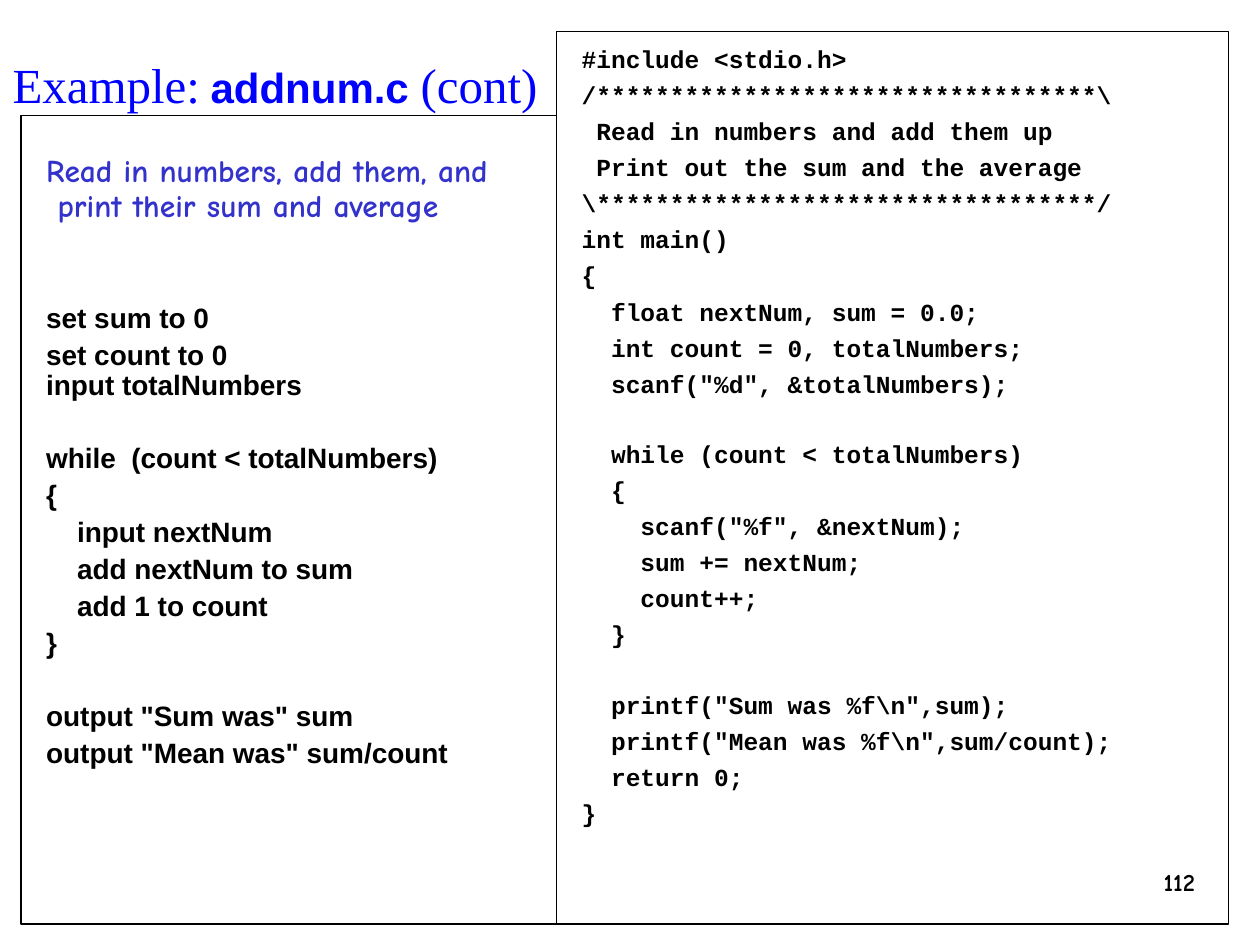
from pptx import Presentation
from pptx import util as u
from pptx.dml.color import RGBColor
from pptx.enum import shapes, text

BLACK = RGBColor(0x00, 0x00, 0x00)
BLUE = RGBColor(0x00, 0x00, 0xFF)
INDIGO = RGBColor(0x33, 0x33, 0xCC)

deck = Presentation()
deck.slide_width, deck.slide_height = u.Inches(10), u.Inches(7.5)
page = deck.slides.add_slide(deck.slide_layouts[5])
COLUMN = deck.slide_width / 120
ROW = deck.slide_height / 90


def grid(left, top, width, height):
    return (round(left * COLUMN), round(top * ROW),
            round(width * COLUMN), round(height * ROW))


def style(span, name, size, color, bold=True):
    span.font.name, span.font.size = name, u.Pt(size)
    span.font.bold, span.font.color.rgb = bold, color


title = page.shapes.title
title.left, title.top, title.width, title.height = grid(0, 4, 52.5, 6.84)
frame = title.text_frame
frame.auto_size = text.MSO_AUTO_SIZE.NONE
frame.word_wrap = False
frame.vertical_anchor = text.MSO_ANCHOR.TOP
frame.margin_top = u.Inches(0.1)
para = frame.paragraphs[0]
para.alignment = text.PP_ALIGN.LEFT
for words, name, size, bold in [
    ("Example:", "Times New Roman", 28, False),
    (" ", "Times New Roman", 24, False),
    ("addnum.c ", "Arial", 24, True),
    ("(cont)", "Times New Roman", 28, False),
]:
    span = para.add_run()
    span.text = words
    style(span, name, size, BLUE, bold)

pseudocode = r"""set sum to 0
set count to 0
input totalNumbers

while  (count < totalNumbers)
{
    input nextNum
    add nextNum to sum
    add 1 to count
}

output "Sum was" sum
output "Mean was" sum/count"""

program = r"""#include <stdio.h>
/**********************************\
 Read in numbers and add them up
 Print out the sum and the average
\**********************************/
int main()
{
  float nextNum, sum = 0.0;
  int count = 0, totalNumbers;
  scanf("%d", &totalNumbers);

  while (count < totalNumbers)
  {
    scanf("%f", &nextNum);
    sum += nextNum;
    count++;
  }

  printf("Sum was %f\n",sum);
  printf("Mean was %f\n",sum/count);
  return 0;
}"""

task = ["Read in numbers, add them, and", "print their sum and average"]

panels = [
    (grid(2, 11, 51, 77), 0.32, task, pseudocode, "Arial", 16, 0.9, 3.9, 20.5),
    (grid(53, 3, 64, 85), 0.1, [], program, "Courier New", 14, 1.0, 3.8, 19.65),
]
for place, inset, intro, code, name, size, spacing, gap, pitch in panels:
    box = page.shapes.add_shape(shapes.MSO_SHAPE.RECTANGLE, *place)
    box.shadow.inherit = False
    box.fill.background()
    box.line.color.rgb, box.line.width = BLACK, u.Pt(0.75)
    frame = box.text_frame
    frame.word_wrap = True
    frame.vertical_anchor = text.MSO_ANCHOR.TOP
    frame.margin_left, frame.margin_top = u.Inches(0.2), u.Inches(inset)

    lines = [(words, "Comic Neue", 18, INDIGO, 0) for words in intro]
    before = 46 if intro else 0
    for words in code.splitlines():
        if not words:
            before += pitch
            continue
        if words == "input totalNumbers":
            before = 0
        lines.append((words, name, size, BLACK, before))
        before = gap

    for index, (words, font, points, color, before) in enumerate(lines):
        para = frame.paragraphs[0] if index == 0 else frame.add_paragraph()
        para.text = words
        para.alignment = text.PP_ALIGN.LEFT
        para.line_spacing, para.space_before = spacing, u.Pt(before)
        if words in intro[1:]:
            para._p.get_or_add_pPr().set("marL", str(u.Inches(0.09)))
        style(para.runs[0], font, points, color)

number = page.shapes.add_textbox(*grid(100, 82, 15, 6))
number.text_frame.word_wrap = True
number.text_frame.text = "112"
para = number.text_frame.paragraphs[0]
para.alignment = text.PP_ALIGN.RIGHT
style(para.runs[0], "Comic Neue", 14, BLACK)

deck.save("out.pptx")
